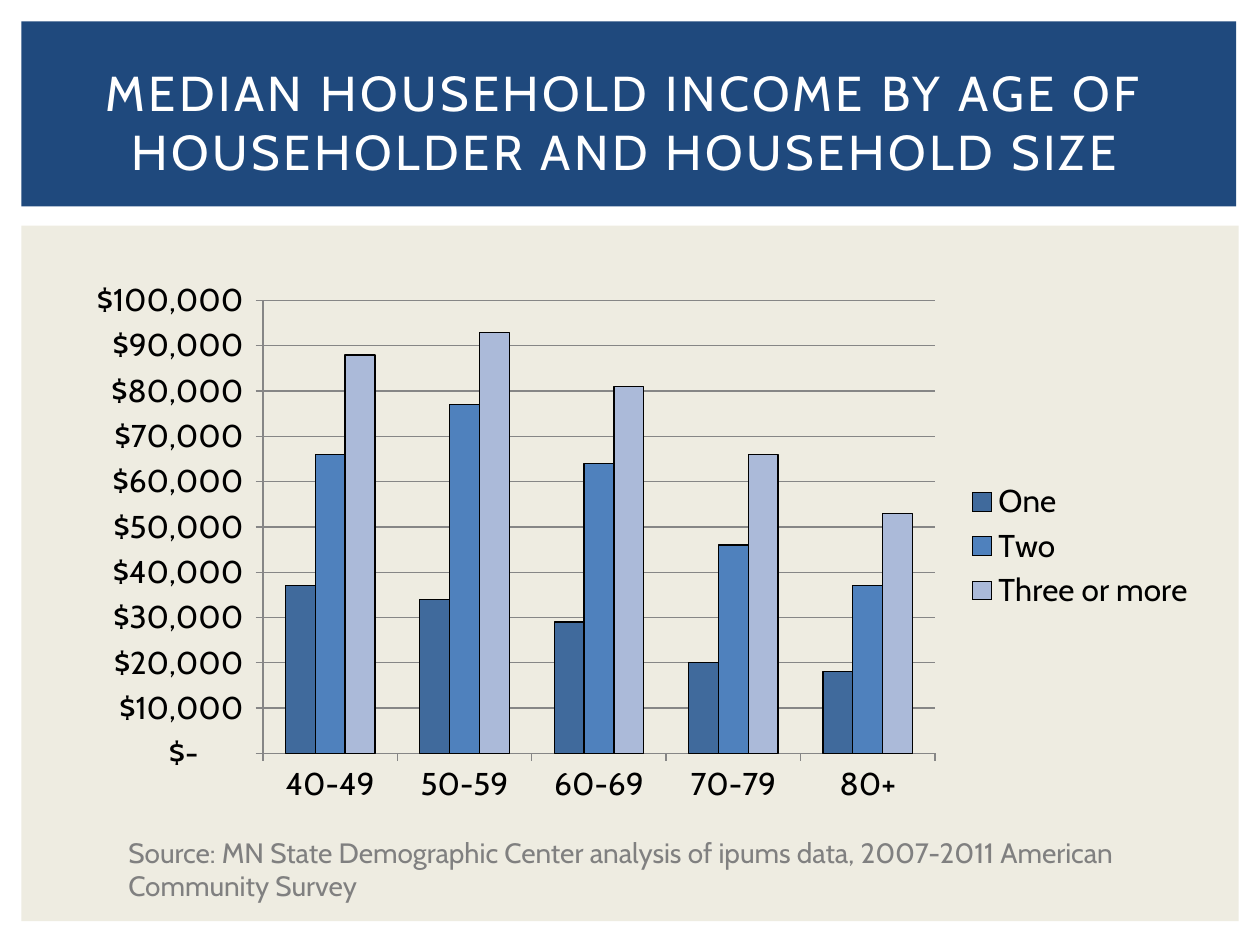
from dataclasses import dataclass

from lxml.etree import SubElement
from pptx import Presentation
from pptx.chart.data import CategoryChartData as ChartData
from pptx.dml.color import RGBColor
from pptx.enum.chart import XL_CHART_TYPE as Kind, XL_LEGEND_POSITION as Side
from pptx.enum.chart import XL_TICK_MARK as Tick
from pptx.enum.shapes import MSO_SHAPE as Form
from pptx.enum.text import MSO_ANCHOR as Anchor, MSO_AUTO_SIZE as Fit, PP_ALIGN as Align
from pptx.oxml.ns import qn
from pptx.util import Cm, Pt

WHITE = RGBColor(0xFF, 0xFF, 0xFF)
BLACK = RGBColor(0x00, 0x00, 0x00)
NAVY = RGBColor(0x1F, 0x49, 0x7D)
CREAM = RGBColor(0xEE, 0xEC, 0xE1)
GREY = RGBColor(0x80, 0x80, 0x80)
RULE = RGBColor(0x86, 0x86, 0x86)
DARK = RGBColor(0x40, 0x6A, 0x9C)
BLUE = RGBColor(0x4F, 0x81, 0xBD)
PALE = RGBColor(0xAB, 0xBA, 0xD9)
FONT = "Cabin"
MONEY = r'_("$"* #,##0_);_("$"* \(#,##0\);_("$"* "-"??_);_(@_)'


@dataclass
class Box:
    left: float
    top: float
    width: float
    height: float

    def spot(self) -> tuple:
        return Cm(self.left), Cm(self.top), Cm(self.width), Cm(self.height)


@dataclass
class Panel:
    box: Box
    fill: RGBColor


@dataclass
class Series:
    name: str
    vals: tuple
    fill: RGBColor


PANELS = (
    Panel(Box(0.43, 4.55, 24.54, 14.02), CREAM),
    Panel(Box(0.43, 0.43, 24.49, 3.73), NAVY),
)
AGES = ("40-49", "50-59", "60-69", "70-79", "80+")
SIZES = (
    Series("One ", (37000, 34000, 29000, 20000, 18000), DARK),
    Series("Two", (66000, 77000, 64000, 46000, 37000), BLUE),
    Series("Three or more", (88000, 93000, 81000, 66000, 53000), PALE),
)
PLOT = {"x": 0.17, "y": 0.05, "w": 0.59, "h": 0.83}


def style(font, size: float, color: RGBColor) -> None:
    font.name = FONT
    font.size = Pt(size)
    font.bold = False
    font.color.rgb = color


def add_run(para, text: str, size: float, color: RGBColor):
    run = para.add_run()
    run.text = text
    style(run.font, size, color)
    return run


def draw_panel(slide, panel: Panel) -> None:
    shape = slide.shapes.add_shape(Form.RECTANGLE, *panel.box.spot())
    shape.shadow.inherit = False
    shape.fill.solid()
    shape.fill.fore_color.rgb = panel.fill
    shape.line.fill.background()


def draw_title(slide, box: Box, text: str) -> None:
    title = slide.shapes.title
    title.left, title.top, title.width, title.height = box.spot()
    node = title._element
    node.getparent().append(node)
    frame = title.text_frame
    frame.word_wrap = True
    frame.auto_size = Fit.NONE
    frame.vertical_anchor = Anchor.MIDDLE
    para = frame.paragraphs[0]
    para.alignment = Align.CENTER
    run = add_run(para, text, 28, WHITE)
    run.font._element.set("spc", "200")


def draw_note(slide, box: Box, text: str) -> None:
    frame = slide.shapes.add_textbox(*box.spot()).text_frame
    frame.word_wrap = True
    frame.auto_size = Fit.SHAPE_TO_FIT_TEXT
    add_run(frame.paragraphs[0], text, 16, GREY)


def place_plot(chart) -> None:
    area = chart._chartSpace.chart.plotArea
    for old in area.findall(qn("c:layout")):
        area.remove(old)
    layout = area.makeelement(qn("c:layout"))
    area.insert(0, layout)
    manual = SubElement(layout, qn("c:manualLayout"))
    pairs = [("layoutTarget", "inner"), ("xMode", "edge"), ("yMode", "edge")]
    for tag, val in pairs + list(PLOT.items()):
        SubElement(manual, qn(f"c:{tag}")).set("val", str(val))


def draw_chart(slide, box: Box) -> None:
    data = ChartData(number_format=MONEY)
    data.categories = AGES
    for item in SIZES:
        data.add_series(item.name, item.vals)
    chart = slide.shapes.add_chart(Kind.COLUMN_CLUSTERED, *box.spot(), data).chart
    style(chart.font, 18, BLACK)
    chart.has_title = False
    chart.has_legend = True
    chart.legend.position = Side.RIGHT
    chart.legend.include_in_layout = False
    style(chart.legend.font, 18, BLACK)
    place_plot(chart)

    plot = chart.plots[0]
    plot.gap_width = 150
    plot.overlap = 0
    plot.vary_by_categories = False
    for bars, item in zip(plot.series, SIZES):
        bars.format.fill.solid()
        bars.format.fill.fore_color.rgb = item.fill
        bars.format.line.color.rgb = BLACK
        bars.format.line.width = Pt(0.75)

    worth = chart.value_axis
    worth.minimum_scale, worth.maximum_scale, worth.major_unit = 0, 100000, 10000
    worth.has_major_gridlines = True
    worth.tick_labels.number_format = MONEY
    worth.tick_labels.number_format_is_linked = False
    for axis in (chart.category_axis, worth):
        axis.major_tick_mark = Tick.OUTSIDE
        axis.minor_tick_mark = Tick.NONE
        style(axis.tick_labels.font, 18, BLACK)
    for part in (chart.category_axis, worth, worth.major_gridlines):
        part.format.line.color.rgb = RULE
        part.format.line.width = Pt(0.75)


def main() -> None:
    deck = Presentation()
    deck.slide_width, deck.slide_height = Cm(25.4), Cm(19.05)
    slide = deck.slides.add_slide(deck.slide_layouts[5])
    for panel in PANELS:
        draw_panel(slide, panel)
    draw_title(
        slide,
        Box(0.43, 1.07, 24.33, 2.77),
        "MEDIAN HOUSEHOLD INCOME BY AGE OF HOUSEHOLDER AND HOUSEHOLD SIZE",
    )
    draw_chart(slide, Box(1.4, 5.51, 22.96, 11))
    draw_note(
        slide,
        Box(2.34, 16.71, 20.52, 1.63),
        "Source: MN State Demographic Center analysis of ipums data, "
        "2007-2011 American Community Survey",
    )
    deck.save("out.pptx")


if __name__ == "__main__":
    main()
